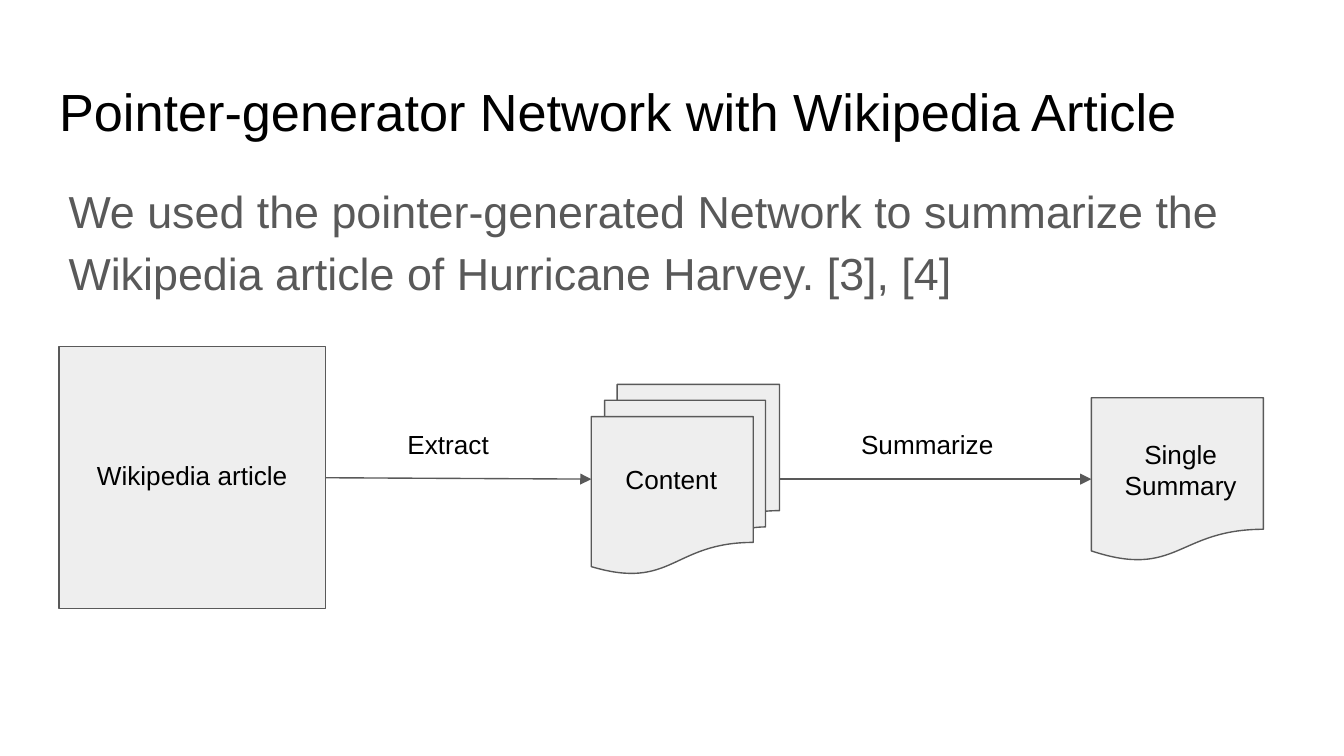
from lxml import etree
from pptx import Presentation
from pptx.dml.color import RGBColor
from pptx.enum.shapes import MSO_CONNECTOR, MSO_SHAPE
from pptx.enum.text import MSO_ANCHOR, MSO_AUTO_SIZE, PP_ALIGN
from pptx.oxml.ns import qn
from pptx.util import Inches, Pt

RECT = MSO_SHAPE.RECTANGLE
PAGE = MSO_SHAPE.FLOWCHART_DOCUMENT
STACK = MSO_SHAPE.FLOWCHART_MULTIDOCUMENT
LINE = MSO_CONNECTOR.STRAIGHT
LEFT, MID = PP_ALIGN.LEFT, PP_ALIGN.CENTER
WIDE = 10
HIGH = WIDE * 9 / 16
BLACK, GREY, PALE = "000000", "595959", "EEEEEE"


def tint(code):
    return RGBColor.from_string(code)


def span(*nums):
    return [Inches(n) for n in nums]


def place(shape, box):
    shape.left, shape.top, shape.width, shape.height = span(*box)


def write(shape, text, size=14, color=BLACK, align=MID, lead=1, after=0):
    """Fill a shape with one paragraph per line of text."""
    frame = shape.text_frame
    frame.word_wrap = True
    frame.auto_size = MSO_AUTO_SIZE.NONE
    frame.vertical_anchor = MSO_ANCHOR.TOP
    frame.margin_left = frame.margin_right = Inches(0.1)
    frame.margin_top = frame.margin_bottom = Inches(0.1)
    frame.text = text
    for para in frame.paragraphs:
        props = para._p.get_or_add_pPr()
        props.set("marL", "0")
        props.set("indent", "0")
        etree.SubElement(props, qn("a:buNone"))
        para.alignment = align
        para.line_spacing = lead
        para.space_before, para.space_after = Pt(0), Pt(after)
        for run in para.runs:
            font = run.font
            font.name, font.size = "Arial", Pt(size)
            font.color.rgb = tint(color)


def label(shapes, text, box):
    write(shapes.add_textbox(*span(*box)), text)


def node(shapes, kind, box, text, inner):
    """Draw an outlined shape; inner is its label box, offset from its corner."""
    shape = shapes.add_shape(kind, *span(*box))
    shape.shadow.inherit = False
    shape.fill.solid()
    shape.fill.fore_color.rgb = tint(PALE)
    shape.line.color.rgb = tint(GREY)
    shape.line.width = Pt(0.75)
    x, y, w, h = inner
    label(shapes, text, (box[0] + x, box[1] + y, w, h))


def arrow(shapes, start, end):
    link = shapes.add_connector(LINE, *span(*start, *end))
    link.line.color.rgb = tint(GREY)
    link.line.width = Pt(0.75)
    etree.SubElement(link.line._get_or_add_ln(), qn("a:tailEnd"), type="triangle")
    etree.SubElement(link._element.spPr, qn("a:effectLst"))


def heading(slide, box):
    x, y, w, h = box
    title, body = slide.placeholders
    place(title, (x, y, w, 0.63))
    write(title, "Pointer-generator Network with Wikipedia Article", size=28, align=LEFT)
    place(body, (x + 0.07, y + 0.72, w, h - 0.72))
    write(body, "We used the pointer-generated Network to summarize the "
          "Wikipedia article of Hurricane Harvey. [3], [4]",
          size=24, color=GREY, align=LEFT, lead=1.15, after=16)


def flow(slide, box):
    """Source article, extracted content and summary, joined by arrows."""
    x, y, w, h = box
    shapes = slide.shapes
    mid = y + h / 2
    axis = mid + 0.01
    first, stack, last = 1.98, 1.4, 1.28
    left, right = x + 3.96, x + w - last

    arrow(shapes, (x + first, mid), (left, axis))
    arrow(shapes, (left + stack, axis), (right, axis))
    node(shapes, RECT, (x, y, first, h), "Wikipedia article",
         (0.05, 0.74, 1.88, 0.46))
    group = shapes.add_group_shape()
    node(group.shapes, STACK, (left, y + 0.28, stack, 1.41), "Content",
         (0.01, 0.49, 1.17, 0.92))
    node(shapes, PAGE, (right, y + 0.38, last, 1.22), "Single\nSummary",
         (0.08, 0.2, 1.17, 0.92))
    for text, start, width in (("Extract", 2.31, 1.17), ("Summarize", 5.79, 1.34)):
        label(shapes, text, (x + start, y + 0.51, width, 0.92))


def main():
    deck = Presentation()
    deck.slide_width, deck.slide_height = span(WIDE, HIGH)
    slide = deck.slides.add_slide(deck.slide_layouts[1])
    slide.background.fill.solid()
    slide.background.fill.fore_color.rgb = tint("FFFFFF")
    heading(slide, (0.34, 0.49, 9.32, 2.5))
    flow(slide, (0.44, 2.58, 8.96, 1.95))
    deck.save("out.pptx")


if __name__ == "__main__":
    main()
